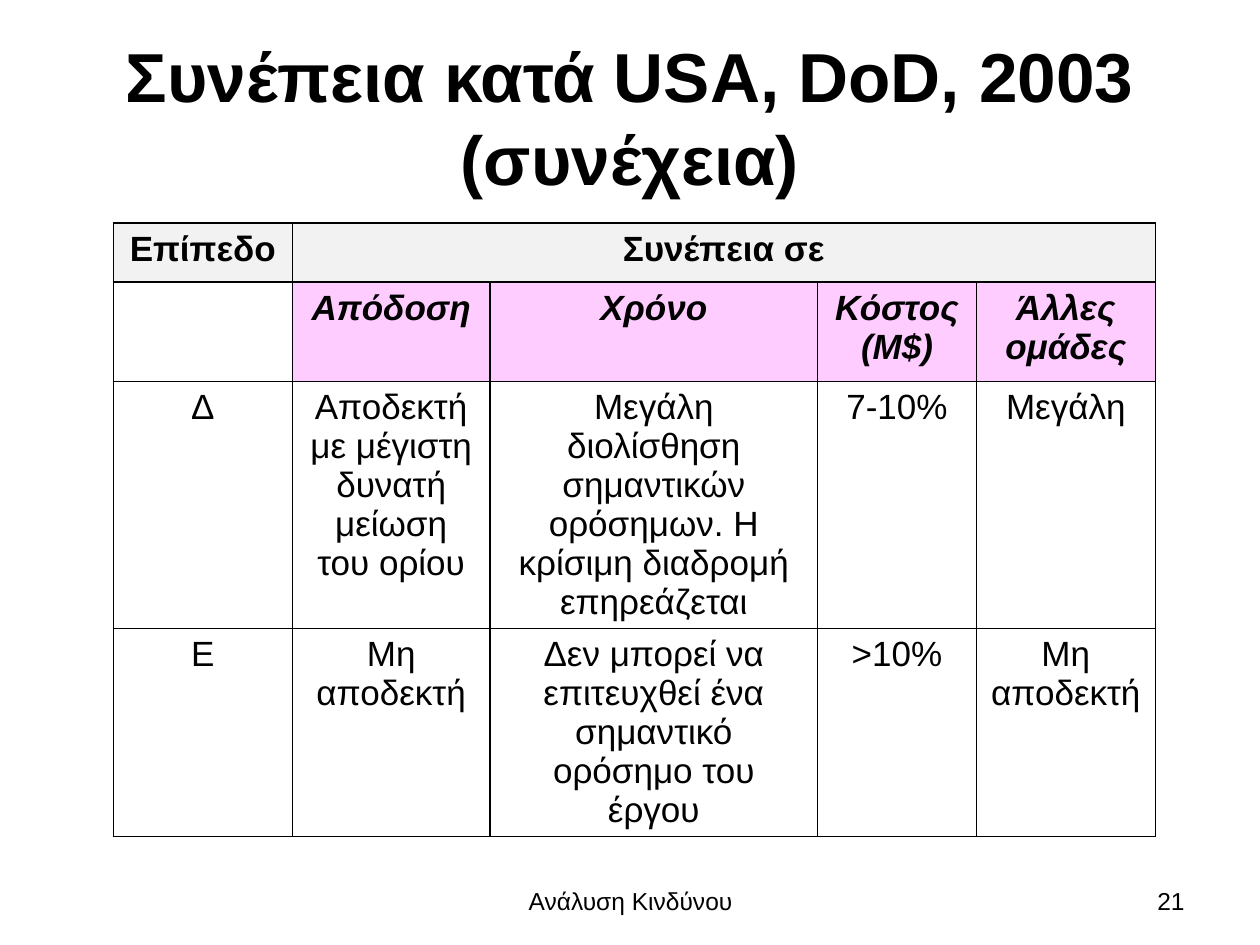
import pptx
import pptx.util
import pptx.dml.color
import pptx.enum.text
import pptx.oxml
import pptx.oxml.ns

COLORS = {"ink": "000000", "header": "F2F2F2", "subheader": "FFCCFF"}
ALIGN = pptx.enum.text.PP_ALIGN
ANCHOR = pptx.enum.text.MSO_ANCHOR


class Deck:
    font = "Arial"
    columns, rows = 100, 75

    def __init__(self, width, height):
        self.file = pptx.Presentation()
        self.file.slide_width = pptx.util.Inches(width)
        self.file.slide_height = pptx.util.Inches(height)
        self.slide = self.file.slides.add_slide(self.file.slide_layouts[5])

    def x(self, columns):
        return round(self.file.slide_width * columns / self.columns)

    def y(self, rows):
        return round(self.file.slide_height * rows / self.rows)

    def box(self, left, top, width, height):
        return self.x(left), self.y(top), self.x(width), self.y(height)

    def add_words(self, frame, words, size, align=ALIGN.CENTER, bold=False, italic=False):
        paragraph = frame.paragraphs[0]
        paragraph.alignment = align
        run = paragraph.add_run()
        run.text = words
        run.font.name = self.font
        run.font.size = pptx.util.Pt(size)
        run.font.bold = bold
        run.font.italic = italic
        run.font.color.rgb = pptx.dml.color.RGBColor.from_string(COLORS["ink"])

    def title(self, words, place, size):
        heading = self.slide.shapes.title
        heading.left, heading.top, heading.width, heading.height = self.box(*place)
        heading.text_frame.auto_size = pptx.enum.text.MSO_AUTO_SIZE.NONE
        heading.text_frame.vertical_anchor = ANCHOR.MIDDLE
        self.add_words(heading.text_frame, words, size, bold=True)

    def label(self, words, place, size, align):
        frame = self.slide.shapes.add_textbox(*self.box(*place)).text_frame
        frame.word_wrap = True
        frame.vertical_anchor = ANCHOR.MIDDLE
        self.add_words(frame, words, size, align)

    def border(self, cell):
        properties = cell._tc.get_or_add_tcPr()
        for side in ("lnL", "lnR", "lnT", "lnB"):
            properties.append(pptx.oxml.parse_xml(
                f'<a:{side} {pptx.oxml.ns.nsdecls("a")} w="{pptx.util.Pt(1)}">'
                f'<a:solidFill><a:srgbClr val="{COLORS["ink"]}"/></a:solidFill></a:{side}>'))

    def cell(self, cell, words, size, fill, bold, italic):
        self.border(cell)
        if fill and words:
            cell.fill.solid()
            cell.fill.fore_color.rgb = pptx.dml.color.RGBColor.from_string(COLORS[fill])
        else:
            cell.fill.background()
        if words:
            self.add_words(cell.text_frame, words, size, bold=bold, italic=italic)

    def table(self, content, styles, left, top, widths, heights, size):
        place = self.box(left, top, sum(widths), sum(heights))
        grid = self.slide.shapes.add_table(len(heights), len(widths), *place).table
        for column, width in zip(grid.columns, widths):
            column.width = self.x(width)
        for row, height in zip(grid.rows, heights):
            row.height = self.y(height)
        for r, (line, style) in enumerate(zip(content, styles)):
            for c, words in enumerate(line):
                self.cell(grid.cell(r, c), words, size, *style)
        grid.cell(0, 1).merge(grid.cell(0, len(widths) - 1))


def main():
    deck = Deck(10, 7.5)
    deck.title("Συνέπεια κατά USA, DoD, 2003 (συνέχεια)", (5, 3, 90, 12.5), 39.6)
    levels = [
        ["Επίπεδο", "Συνέπεια σε", "", "", ""],
        ["", "Απόδοση", "Χρόνο", "Κόστος (Μ$)", "Άλλες ομάδες"],
        ["Δ", "Αποδεκτή με μέγιστη δυνατή μείωση του ορίου",
         "Μεγάλη διολίσθηση σημαντικών ορόσημων. Η κρίσιμη διαδρομή επηρεάζεται",
         "7-10%", "Μεγάλη"],
        ["Ε", "Μη αποδεκτή",
         "Δεν μπορεί να επιτευχθεί ένα σημαντικό ορόσημο του έργου",
         ">10%", "Μη αποδεκτή"],
    ]
    plain = (None, False, False)
    styles = [("header", True, False), ("subheader", True, True), plain, plain]
    deck.table(levels, styles, 9, 17.7, [14.2, 15.7, 26, 12.6, 14.2],
               [4.7, 7.9, 19.6, 16.5], 20)
    deck.label("Ανάλυση Κινδύνου", (34.2, 69.5, 31.7, 4), 14, ALIGN.CENTER)
    deck.label("21", (71.7, 69.5, 23.3, 4), 14, ALIGN.RIGHT)
    deck.file.save("out.pptx")


if __name__ == "__main__":
    main()
